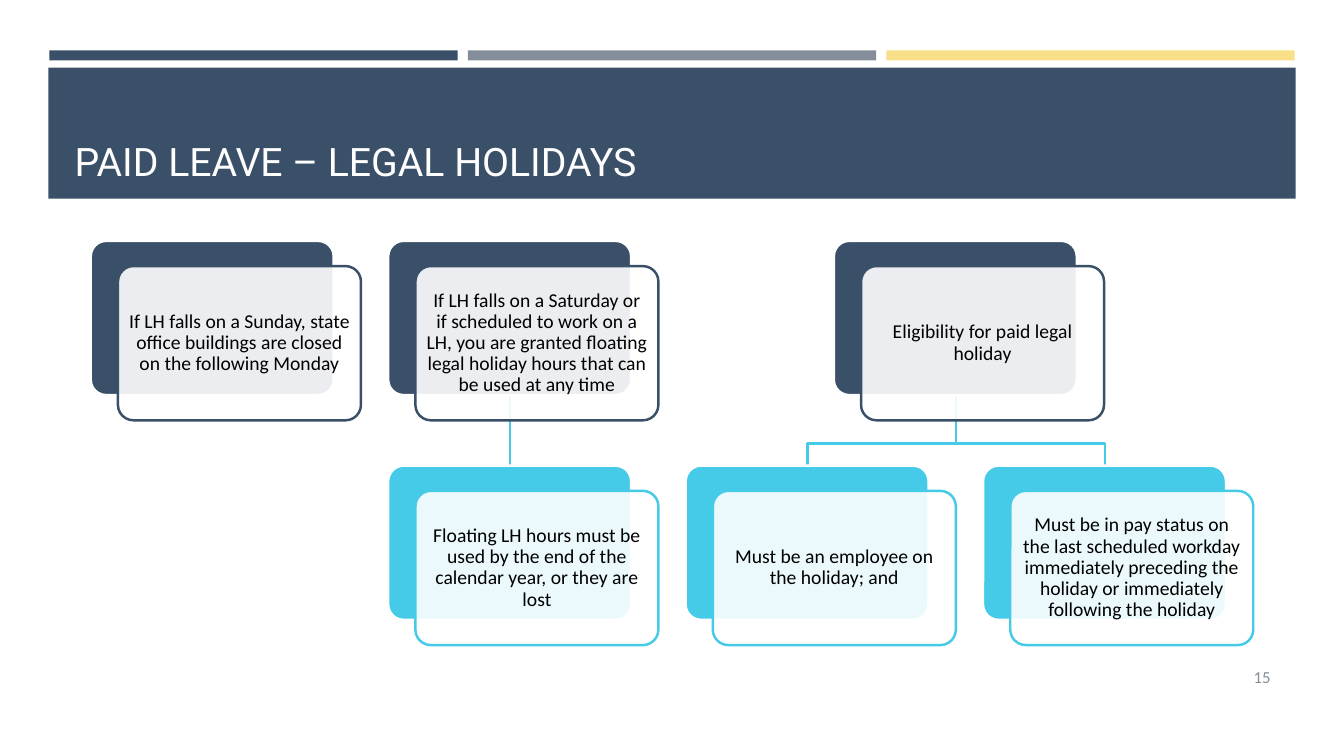
from lxml.etree import SubElement
from pptx import Presentation
from pptx.dml.color import RGBColor
from pptx.enum.shapes import MSO_CONNECTOR, MSO_SHAPE
from pptx.enum.text import MSO_ANCHOR, MSO_AUTO_SIZE, PP_ALIGN
from pptx.oxml.ns import qn
from pptx.util import Pt

PX = 9144  # EMU in one px, 100 px to the inch

COLORS = {
    "navy": "3A5068",
    "gray": "848D9A",
    "yellow": "F8DF88",
    "cyan": "45CBE8",
    "white": "FFFFFF",
    "title": "FFFEFF",
    "black": "000000",
}

CARD_WIDTH, CARD_HEIGHT = 241, 153
CARD_SHIFT_X, CARD_SHIFT_Y = 27, 25
TOP_ROW, BOTTOM_ROW = 239, 462
COLUMNS = [90 + 295 * index for index in range(4)]
ELIGIBILITY_LEFT = 827

CARDS = [
    (COLUMNS[0], TOP_ROW, "navy",
     "If LH falls on a Sunday, state office buildings are closed on the following Monday"),
    (COLUMNS[1], TOP_ROW, "navy",
     "If LH falls on a Saturday or if scheduled to work on a LH, you are granted "
     "floating legal holiday hours that can be used at any time"),
    (COLUMNS[1], BOTTOM_ROW, "cyan",
     "Floating LH hours must be used by the end of the calendar year, or they are lost"),
    (ELIGIBILITY_LEFT, TOP_ROW, "navy", "Eligibility for paid legal holiday"),
    (COLUMNS[2], BOTTOM_ROW, "cyan", "Must be an employee on the holiday; and"),
    (COLUMNS[3], BOTTOM_ROW, "cyan",
     "Must be in pay status on the last scheduled workday immediately preceding "
     "the holiday or immediately following the holiday"),
]


def color(name):
    return RGBColor.from_string(COLORS[name])


class SlideBuilder:
    line_width = Pt(1.75)
    body_font = "Calibri"
    title_font = "Roboto"

    def __init__(self, slide):
        self.slide = slide
        self.shapes = slide.shapes

    def place(self, shape, left, top, width, height):
        shape.left, shape.top = left * PX, top * PX
        shape.width, shape.height = width * PX, height * PX

    def set_text(self, shape, text, size, font_name, font_color, alignment, anchor):
        frame = shape.text_frame
        frame.text = text
        frame.word_wrap = True
        frame.auto_size = MSO_AUTO_SIZE.NONE
        frame.vertical_anchor = anchor
        paragraph = frame.paragraphs[0]
        paragraph.alignment = alignment
        font = paragraph.runs[0].font
        font.size, font.name = Pt(size), font_name
        font.color.rgb = color(font_color)
        return paragraph

    def box(self, left, top, width, height, fill, line=None, kind=MSO_SHAPE.RECTANGLE):
        shape = self.shapes.add_shape(kind, left * PX, top * PX, width * PX, height * PX)
        shape.shadow.inherit = False
        shape.fill.solid()
        shape.fill.fore_color.rgb = color(fill)
        if line:
            shape.line.color.rgb = color(line)
            shape.line.width = self.line_width
        else:
            shape.line.fill.background()
        if kind == MSO_SHAPE.ROUNDED_RECTANGLE:
            shape.adjustments[0] = 0.1
        return shape

    def title(self, text, left, top, width, height):
        """Fill the title placeholder and bring it in front of the band."""
        title = self.shapes.title
        self.place(title, left, top, width, height)
        self.set_text(title, text, 28, self.title_font, "title",
                      PP_ALIGN.LEFT, MSO_ANCHOR.BOTTOM)
        self.shapes._spTree.append(title._element)

    def page_number(self, text, left, top, width, height):
        box = self.shapes.add_textbox(left * PX, top * PX, width * PX, height * PX)
        self.set_text(box, text, 12, self.body_font, "gray", PP_ALIGN.RIGHT, MSO_ANCHOR.MIDDLE)

    def card(self, left, top, accent, text):
        """Draw a solid back plate and a translucent front card with its text."""
        rounded = MSO_SHAPE.ROUNDED_RECTANGLE
        self.box(left, top, CARD_WIDTH, CARD_HEIGHT, accent, "white", rounded)
        front = self.box(left + CARD_SHIFT_X, top + CARD_SHIFT_Y,
                         CARD_WIDTH, CARD_HEIGHT, "white", accent, rounded)
        fill_color = front._element.spPr.find(qn("a:solidFill"))[0]
        SubElement(fill_color, qn("a:alpha"), val="90000")
        frame = front.text_frame
        frame.margin_left = frame.margin_right = 6 * PX
        frame.margin_top = frame.margin_bottom = 6 * PX
        paragraph = self.set_text(front, text, 14, self.body_font, "black",
                                  PP_ALIGN.CENTER, MSO_ANCHOR.MIDDLE)
        paragraph.line_spacing = 0.9

    def branch(self, parent_left, child_left):
        """Link the bottom of a parent plate to the top of a child plate."""
        start_x, end_x = parent_left + CARD_WIDTH // 2 + 1, child_left + CARD_WIDTH // 2 + 1
        start_y, bend_y = TOP_ROW + CARD_HEIGHT, 440
        if start_x == end_x:
            link = self.shapes.add_connector(MSO_CONNECTOR.STRAIGHT, start_x * PX, start_y * PX,
                                             end_x * PX, BOTTOM_ROW * PX)
            SubElement(link._element.spPr, qn("a:effectLst"))
        else:
            builder = self.shapes.build_freeform(start_x, start_y, scale=PX)
            builder.add_line_segments(
                [(start_x, bend_y), (end_x, bend_y), (end_x, BOTTOM_ROW)], close=False)
            link = builder.convert_to_shape()
            link.shadow.inherit = False
            link.fill.background()
        link.line.color.rgb = color("cyan")
        link.line.width = self.line_width


def main():
    presentation = Presentation()
    presentation.slide_width, presentation.slide_height = 1333 * PX, 750 * PX
    title_only = presentation.slide_layouts[5]
    builder = SlideBuilder(presentation.slides.add_slide(title_only))

    for index, bar_color in enumerate(["navy", "gray", "yellow"]):
        builder.box(49 + 415 * index, 50, 405, 10, bar_color)
    builder.box(48, 67, 1237, 130, "navy")
    builder.title("PAID LEAVE – LEGAL HOLIDAYS", 64, 77, 1206, 111)
    builder.page_number("15", 1155, 651, 115, 40)

    for parent_left, child_left in [(ELIGIBILITY_LEFT, COLUMNS[3]),
                                    (ELIGIBILITY_LEFT, COLUMNS[2]),
                                    (COLUMNS[1], COLUMNS[1])]:
        builder.branch(parent_left, child_left)
    for card in CARDS:
        builder.card(*card)

    presentation.save("out.pptx")


if __name__ == "__main__":
    main()
